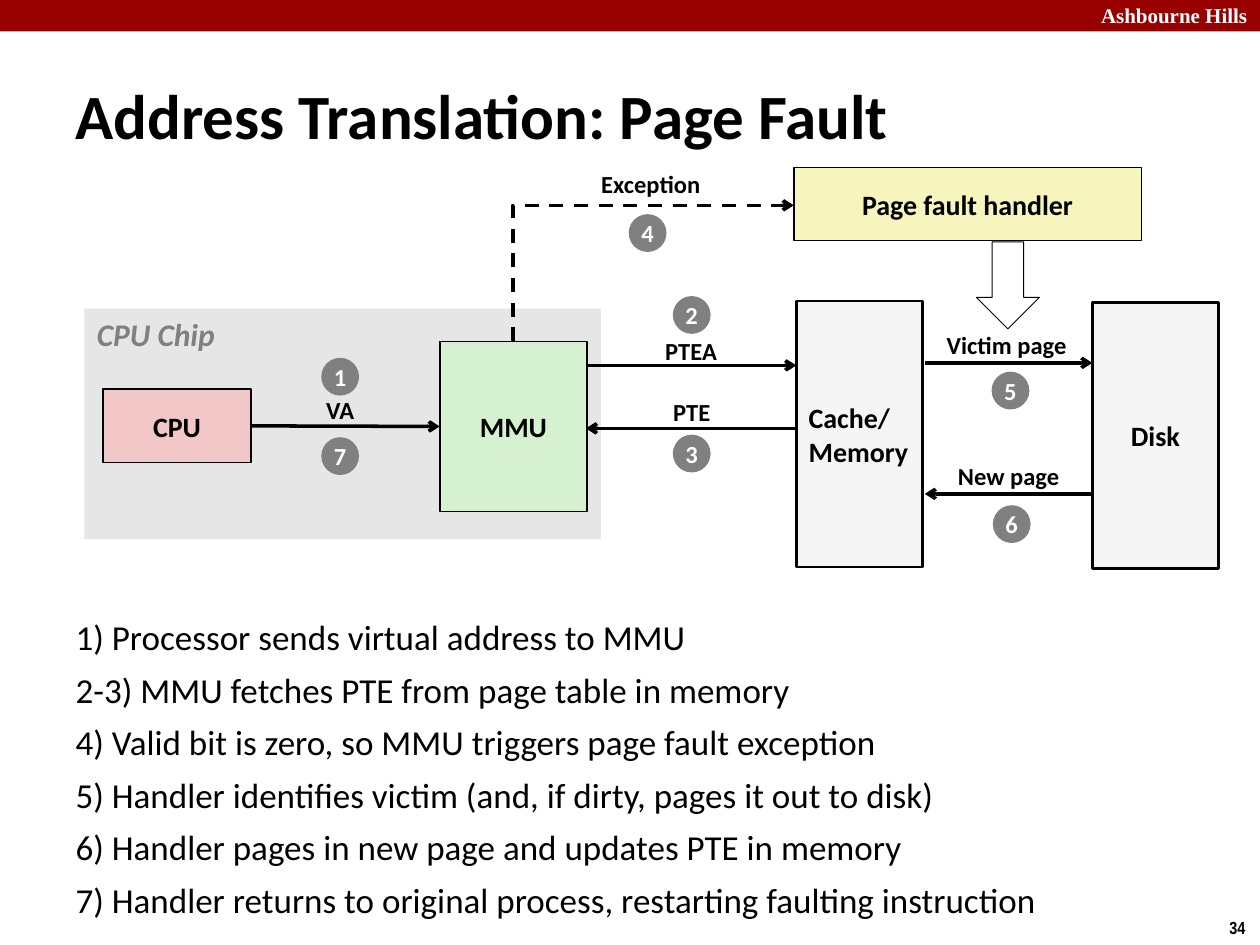
from lxml import etree
from pptx import Presentation
from pptx.dml.color import RGBColor
from pptx.enum.dml import MSO_LINE
from pptx.enum.shapes import MSO_CONNECTOR, MSO_SHAPE
from pptx.enum.text import MSO_ANCHOR, MSO_AUTO_SIZE, PP_ALIGN
from pptx.oxml.ns import qn
from pptx.util import Inches, Pt

RECT, OVAL, DOWN_ARROW = MSO_SHAPE.RECTANGLE, MSO_SHAPE.OVAL, MSO_SHAPE.DOWN_ARROW
STRAIGHT, ELBOW = MSO_CONNECTOR.STRAIGHT, MSO_CONNECTOR.ELBOW
LEFT, CENTER = PP_ALIGN.LEFT, PP_ALIGN.CENTER
TOP, MIDDLE = MSO_ANCHOR.TOP, MSO_ANCHOR.MIDDLE
NO_FIT = MSO_AUTO_SIZE.NONE
DASH = MSO_LINE.DASH
BLACK, WHITE, GRAY = "000000", "FFFFFF", "808080"

STEPS = [
    "1) Processor sends virtual address to MMU",
    "2-3) MMU fetches PTE from page table in memory",
    "4) Valid bit is zero, so MMU triggers page fault exception",
    "5) Handler identifies victim (and, if dirty, pages it out to disk)",
    "6) Handler pages in new page and updates PTE in memory",
    "7) Handler returns to original process, restarting faulting instruction",
]
LABELS = [
    ("VA", 2.49, 3.09, 0.42),
    ("PTEA", 5.18, 2.62, 0.61),
    ("PTE", 5.24, 3.1, 0.5),
    ("Victim page", 7.41, 2.57, 1.16),
    ("New page", 7.5, 3.61, 1.01),
    ("Exception", 4.67, 1.29, 0.99),
]
BADGES = [(2.55, 2.84), (5.34, 2.35), (5.34, 3.45), (4.99, 1.7),
          (7.87, 2.95), (7.88, 4.01), (2.55, 3.47)]
ARROWS = [
    ((4.65, 2.9), (6.32, 2.9)),
    ((6.32, 3.4), (4.65, 3.4)),
    ((7.34, 2.88), (8.67, 2.88)),
    ((8.67, 3.92), (7.34, 3.92)),
]


def rgb(color):
    return RGBColor.from_string(color)


def write(tf, text, size, color=BLACK, font="Calibri", bold=True, italic=False,
          align=LEFT, anchor=MIDDLE, wrap=False):
    tf.text = text
    tf.word_wrap = wrap
    tf.auto_size = NO_FIT
    tf.vertical_anchor = anchor
    for p in tf.paragraphs:
        p.alignment = align
        for r in p.runs:
            r.font.name = font
            r.font.size = Pt(size)
            r.font.bold = bold
            r.font.italic = italic
            r.font.color.rgb = rgb(color)


def place(sp, left, top, width, height):
    sp.left, sp.top = Inches(left), Inches(top)
    sp.width, sp.height = Inches(width), Inches(height)


def add_shape(s, kind, box, fill=None, line=None):
    sp = s.shapes.add_shape(kind, *map(Inches, box))
    sp.shadow.inherit = False
    if fill:
        sp.fill.solid()
        sp.fill.fore_color.rgb = rgb(fill)
    else:
        sp.fill.background()
    if line:
        sp.line.color.rgb = rgb(BLACK)
        sp.line.width = Pt(line)
    else:
        sp.line.fill.background()
    return sp


def add_block(s, text, box, fill, line=1, align=CENTER):
    sp = add_shape(s, RECT, box, fill, line)
    write(sp.text_frame, text, 16, align=align)
    return sp


def add_badge(s, number, left, top):
    sp = add_shape(s, OVAL, (left, top, 0.3, 0.3), GRAY)
    write(sp.text_frame, str(number), 14, WHITE, align=CENTER)


def add_text(s, text, box, size, **style):
    sp = s.shapes.add_textbox(*map(Inches, box))
    write(sp.text_frame, text, size, **style)


def add_arrow(s, start, end, kind=STRAIGHT):
    c = s.shapes.add_connector(kind, *map(Inches, start + end))
    c.line.color.rgb = rgb(BLACK)
    c.line.width = Pt(2)
    tail = etree.SubElement(c.line._get_or_add_ln(), qn("a:tailEnd"))
    tail.set("type", "arrow")
    etree.SubElement(c._element.spPr, qn("a:effectLst"))
    return c


def add_exception_path(s, mmu, handler):
    start, end = (4.07, 2.71), (6.3, 1.63)
    c = add_arrow(s, start, end, ELBOW)
    c.line.dash_style = DASH
    c.begin_connect(mmu, 0)
    c.end_connect(handler, 1)
    run, rise = end[0] - start[0], start[1] - end[1]
    place(c, (start[0] + end[0] - rise) / 2, (start[1] + end[1] - run) / 2, rise, run)
    spPr = c._element.spPr
    xfrm = spPr.find(qn("a:xfrm"))
    for name, value in (("rot", "5400000"), ("flipH", "1"), ("flipV", "1")):
        xfrm.set(name, value)
    spPr.find(qn("a:prstGeom")).set("prst", "bentConnector2")


def add_steps(body):
    place(body, 0.5, 4.92, 8.75, 2.25)
    write(body.text_frame, "\n".join(STEPS), 20, bold=False, anchor=TOP, wrap=True)
    for p in body.text_frame.paragraphs:
        p.line_spacing = 0.73
        p.space_before = Pt(12.5)
        pPr = p._p.get_or_add_pPr()
        pPr.set("marL", str(Inches(0.38)))
        pPr.set("indent", str(-Inches(0.38)))
        etree.SubElement(pPr, qn("a:buNone"))


def add_diagram(s):
    add_shape(s, RECT, (0.67, 2.45, 4.1, 1.83), "E6E6E6")
    add_text(s, "CPU Chip", (0.67, 2.45, 1.16, 0.4), 18, color=GRAY, italic=True, anchor=TOP)
    cpu = add_block(s, "CPU", (0.82, 3.09, 1.17, 0.58), "F1C7C7")
    mmu = add_block(s, "MMU", (3.49, 2.71, 1.17, 1.35), "D5F1CF")
    add_block(s, "Cache/\nMemory", (6.32, 2.39, 1, 2.11), "F5F5F5", 1.5, LEFT)
    add_block(s, "Disk", (8.67, 2.4, 1, 2.11), "F5F5F5", 1.5)
    handler = add_block(s, "Page fault handler", (6.3, 1.33, 2.76, 0.58), "F6F5BD")
    add_shape(s, DOWN_ARROW, (7.75, 1.92, 0.5, 0.69), line=0.5)

    va = add_arrow(s, (1.99, 3.38), (3.49, 3.38))
    va.begin_connect(cpu, 3)
    va.end_connect(mmu, 1)
    for start, end in ARROWS:
        add_arrow(s, start, end)
    add_exception_path(s, mmu, handler)

    for text, left, top, width in LABELS:
        add_text(s, text, (left, top, width, 0.33), 14, align=CENTER)
    for number, (left, top) in enumerate(BADGES, 1):
        add_badge(s, number, left, top)


def main():
    prs = Presentation()
    prs.slide_width, prs.slide_height = Inches(10), Inches(7.5)
    s = prs.slides.add_slide(prs.slide_layouts[1])

    add_shape(s, RECT, (0, 0, 10, 0.25), "990000")
    add_text(s, "Ashbourne Hills", (8.64, -0.03, 1.43, 0.3), 12,
             color=WHITE, font="Times New Roman", anchor=TOP)
    add_text(s, "34", (9.66, 7.23, 0.34, 0.27), 10, font="Arial Narrow", anchor=TOP)

    title = s.shapes.title
    place(title, 0.5, 0.48, 9.53, 0.86)
    write(title.text_frame, "Address Translation: Page Fault", 36, wrap=True)
    add_steps(s.placeholders[1])
    add_diagram(s)
    prs.save("out.pptx")


if __name__ == "__main__":
    main()
